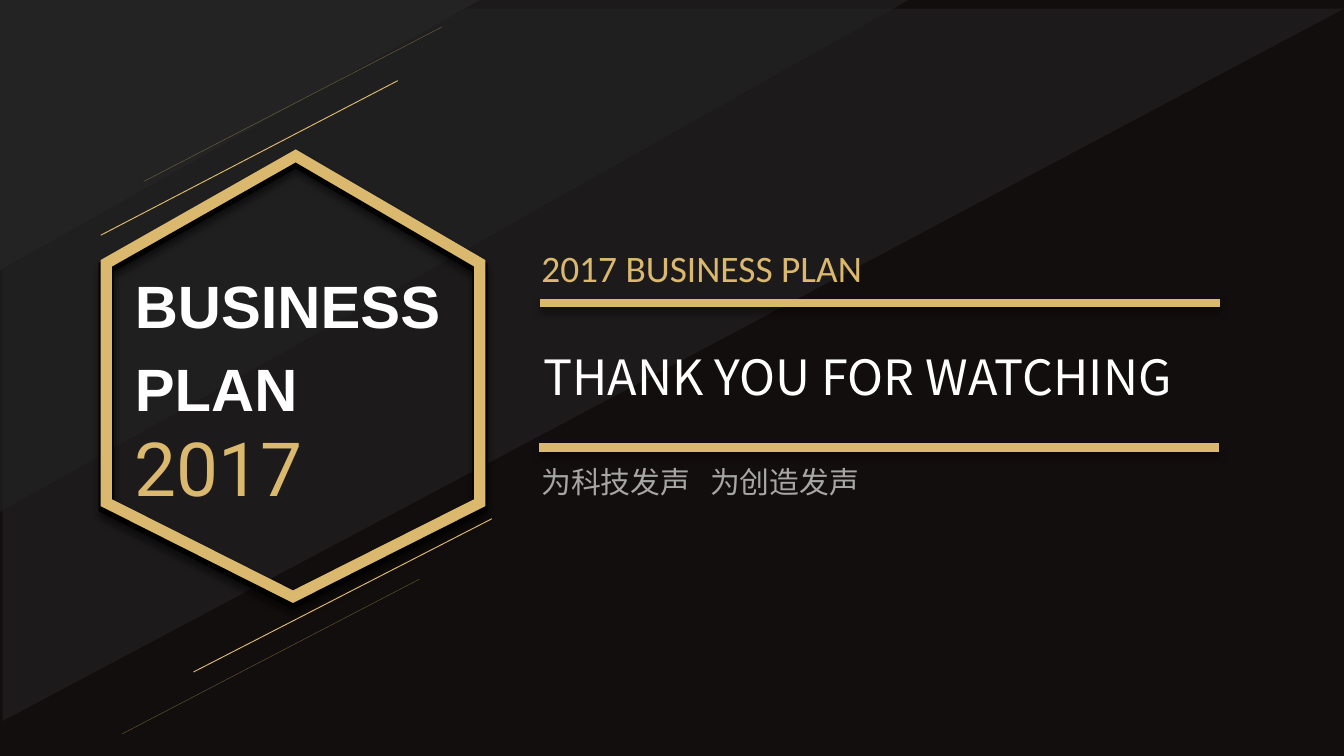
import typing
import lxml.etree
import pptx
import pptx.dml.color
import pptx.enum.shapes
import pptx.oxml.ns
import pptx.util

# The slide is a grid of square cells, 100 columns wide and 56.25 rows high.
COLS, ROWS = 100, 56.25
CELL = pptx.util.Inches(0.1)
GOLD, WHITE, GREY = "DAB96E", "FFFFFF", "A6A6A6"
BACK, PANEL, DARK = "120E0D", "232323", "020302"
CJK = "Noto Sans CJK SC"
GAP = 7  # points added to the space between the two mottos


class Wedge(typing.NamedTuple):
    """Corner triangle whose right angle sits at the top left."""
    col: float
    row: float
    wide: float
    high: float
    alpha: int


class Rule(typing.NamedTuple):
    start: tuple[float, float]
    end: tuple[float, float]
    weight: float
    alpha: int = 100
    shade: bool = False


class Label(typing.NamedTuple):
    words: tuple[str, ...]
    box: tuple[float, float, float, float]
    size: float
    font: str
    color: str
    bold: bool = False
    wrap: bool = False


WEDGES = [
    Wedge(0.2, 0.65, 99.8, 53, 60),
    Wedge(0, 0, 67.6, 38.1, 60),
    Wedge(0, 0, 35.7, 20.1, 100),
]
HEX = [(22, 0), (35.7, 8), (35.7, 25.8), (21.8, 32.8), (7.9, 25.8), (7.9, 8)]
RULES = [
    Rule((40.2, 22.55), (90.75, 22.55), 4.5, shade=True),
    Rule((40.1, 33.3), (90.7, 33.3), 4.5, shade=True),
    Rule((14.4, 50), (36.6, 38.6), 0.5),
    Rule((9.1, 54.6), (31.2, 43.1), 0.25, 40),
    Rule((7.5, 17.5), (29.6, 6), 0.5),
    Rule((10.7, 13.5), (32.9, 2), 0.25, 40),
]
LABELS = [
    Label(("THANK YOU FOR WATCHING",), (39.45, 25.3, 54.6, 5.4), 26, CJK, WHITE, wrap=True),
    Label(("2017 BUSINESS PLAN",), (39.3, 17.75, 26.1, 4.4), 20, "Calibri", GOLD),
    Label(("为科技发声", "为创造发声"), (39.3, 34, 27.2, 3.7), 16, CJK, GREY, wrap=True),
    Label(("BUSINESS",), (9.05, 19.5, 25, 6.4), 32, "Arial", WHITE, bold=True),
    Label(("2017",), (9.05, 30.9, 14.5, 7.7), 40, "Roboto", GOLD),
    Label(("PLAN",), (9.05, 25.7, 14.2, 6.4), 32, "Arial", WHITE, bold=True),
]


def cells(*counts: float) -> list[int]:
    return [round(n * CELL) for n in counts]


def add(node, tag: str, **attrs):
    child = lxml.etree.SubElement(node, pptx.oxml.ns.qn(tag))
    for key, value in attrs.items():
        child.set(key, str(value))
    return child


def paint(fill, color: str, alpha: int = 100) -> None:
    fill.solid()
    fill.fore_color.rgb = pptx.dml.color.RGBColor.from_string(color)
    if alpha < 100:
        node = fill._xPr.find(".//" + pptx.oxml.ns.qn("a:srgbClr"))
        add(node, "a:alpha", val=alpha * 1000)


def cast(shape, shade: bool = True) -> None:
    """Give the shape a soft shadow below it, or none at all."""
    effects = add(shape._element.spPr, "a:effectLst")
    if shade:
        outer = add(effects, "a:outerShdw", blurRad=pptx.util.Pt(4),
                    dist=pptx.util.Pt(3), dir=90 * 60000, algn="t", rotWithShape=0)
        add(add(outer, "a:srgbClr", val="000000"), "a:alpha", val=40000)


def draw_wedge(slide, wedge: Wedge) -> None:
    # A quarter turn about the centre swaps width and height.
    shift = (wedge.wide - wedge.high) / 2
    shape = slide.shapes.add_shape(
        pptx.enum.shapes.MSO_SHAPE.RIGHT_TRIANGLE,
        *cells(wedge.col + shift, wedge.row - shift, wedge.high, wedge.wide))
    shape.rotation = 90
    paint(shape.fill, PANEL, wedge.alpha)
    shape.line.fill.background()
    shape.shadow.inherit = False


def draw_hex(slide, top: float, color: str, weight: float) -> None:
    points = [tuple(cells(x, y + top)) for x, y in HEX]
    maker = slide.shapes.build_freeform(*points[0])
    maker.add_line_segments(points[1:], close=True)
    shape = maker.convert_to_shape()
    shape.fill.background()
    paint(shape.line.fill, color)
    shape.line.width = pptx.util.Pt(weight)
    add(shape.line._get_or_add_ln(), "a:miter", lim=800000)
    cast(shape)


def draw_rule(slide, rule: Rule) -> None:
    line = slide.shapes.add_connector(
        pptx.enum.shapes.MSO_CONNECTOR.STRAIGHT, *cells(*rule.start, *rule.end))
    paint(line.line.fill, GOLD, rule.alpha)
    line.line.width = pptx.util.Pt(rule.weight)
    cast(line, rule.shade)


def draw_label(slide, label: Label) -> None:
    frame = slide.shapes.add_textbox(*cells(*label.box)).text_frame
    frame.word_wrap = label.wrap
    para = frame.paragraphs[0]
    font = para.font
    font.size = pptx.util.Pt(label.size)
    font.bold = label.bold
    paint(font.fill, label.color)
    font.name = label.font
    add(font._rPr, "a:ea", typeface=label.font)
    for place, part in enumerate(label.words):
        if place:
            space = para.add_run()
            space.text = " "
            space.font._rPr.set("spc", str(GAP * 100))
        para.add_run().text = part


def main() -> None:
    deck = pptx.Presentation()
    deck.slide_width, deck.slide_height = cells(COLS, ROWS)
    slide = deck.slides.add_slide(deck.slide_layouts[6])
    paint(slide.background.fill, BACK)
    for wedge in WEDGES:
        draw_wedge(slide, wedge)
    draw_hex(slide, 11.9, DARK, 8)
    draw_hex(slide, 11.6, GOLD, 6)
    for rule in RULES:
        draw_rule(slide, rule)
    for label in LABELS:
        draw_label(slide, label)
    deck.save("out.pptx")


if __name__ == "__main__":
    main()
